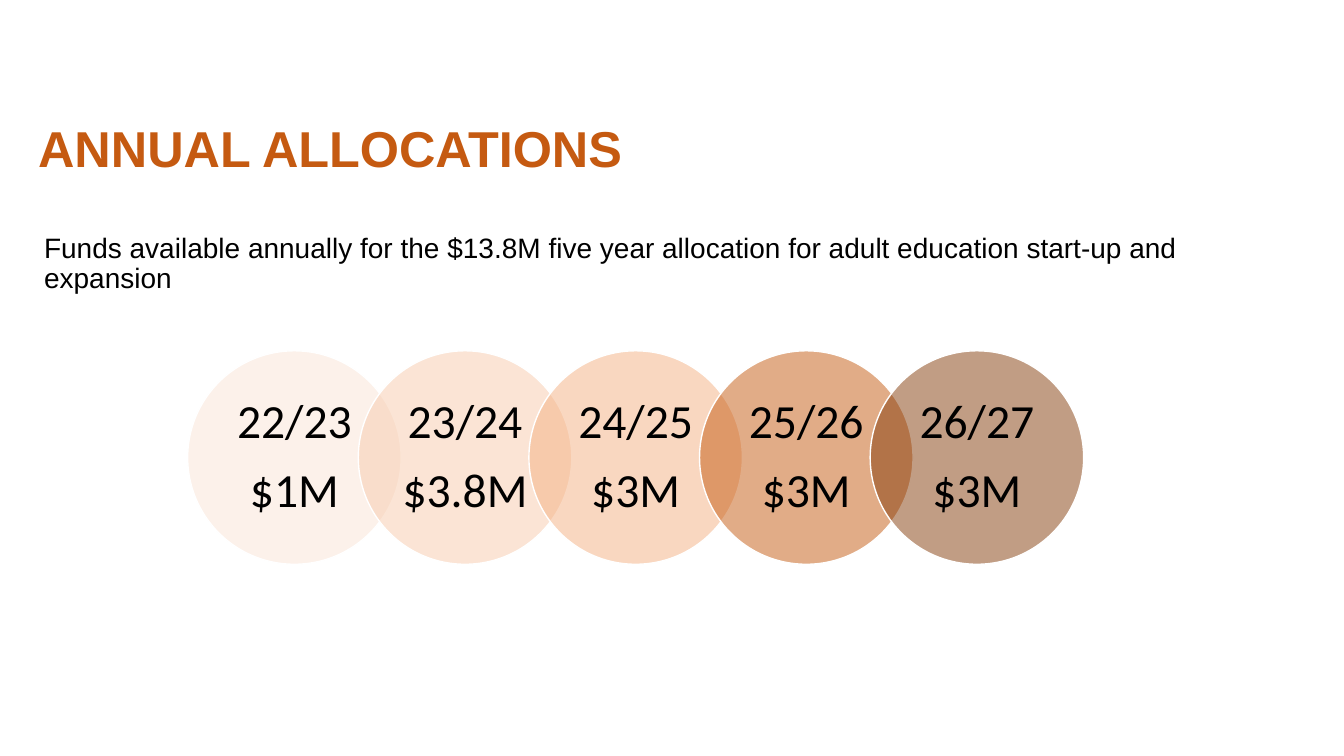
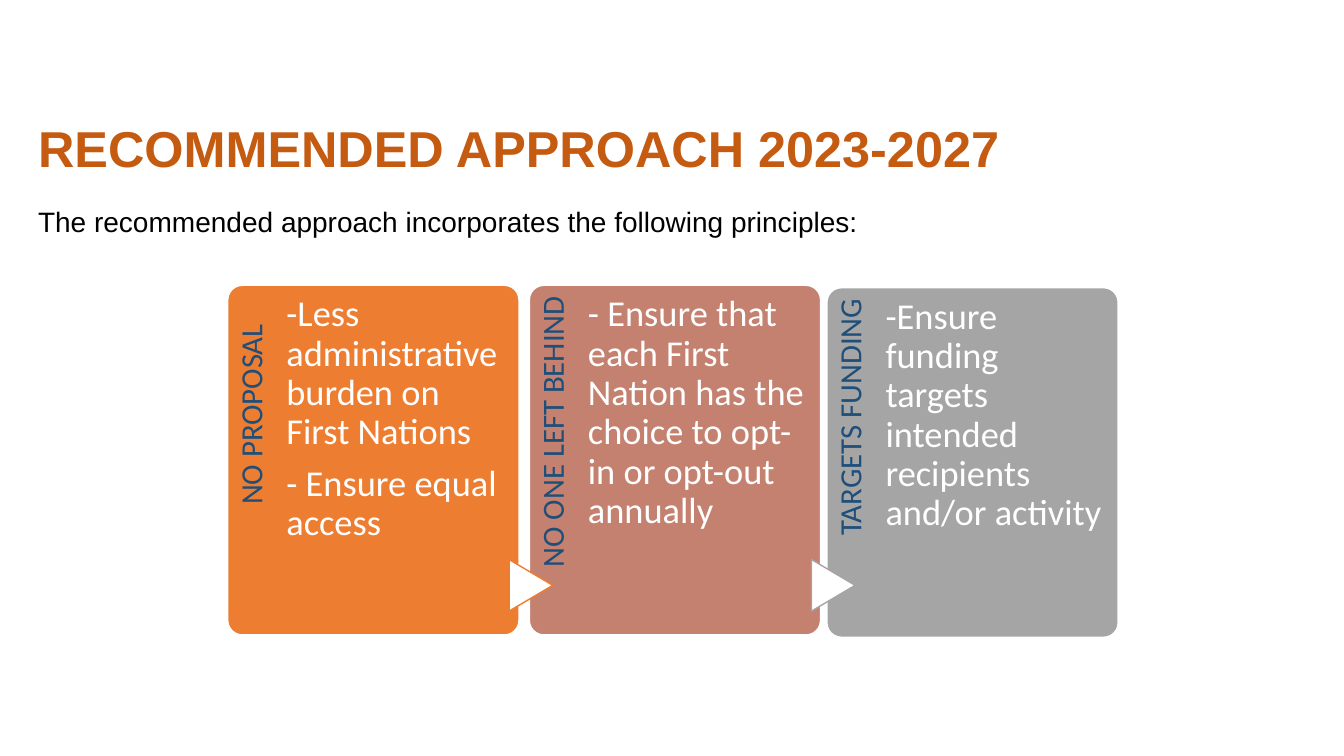
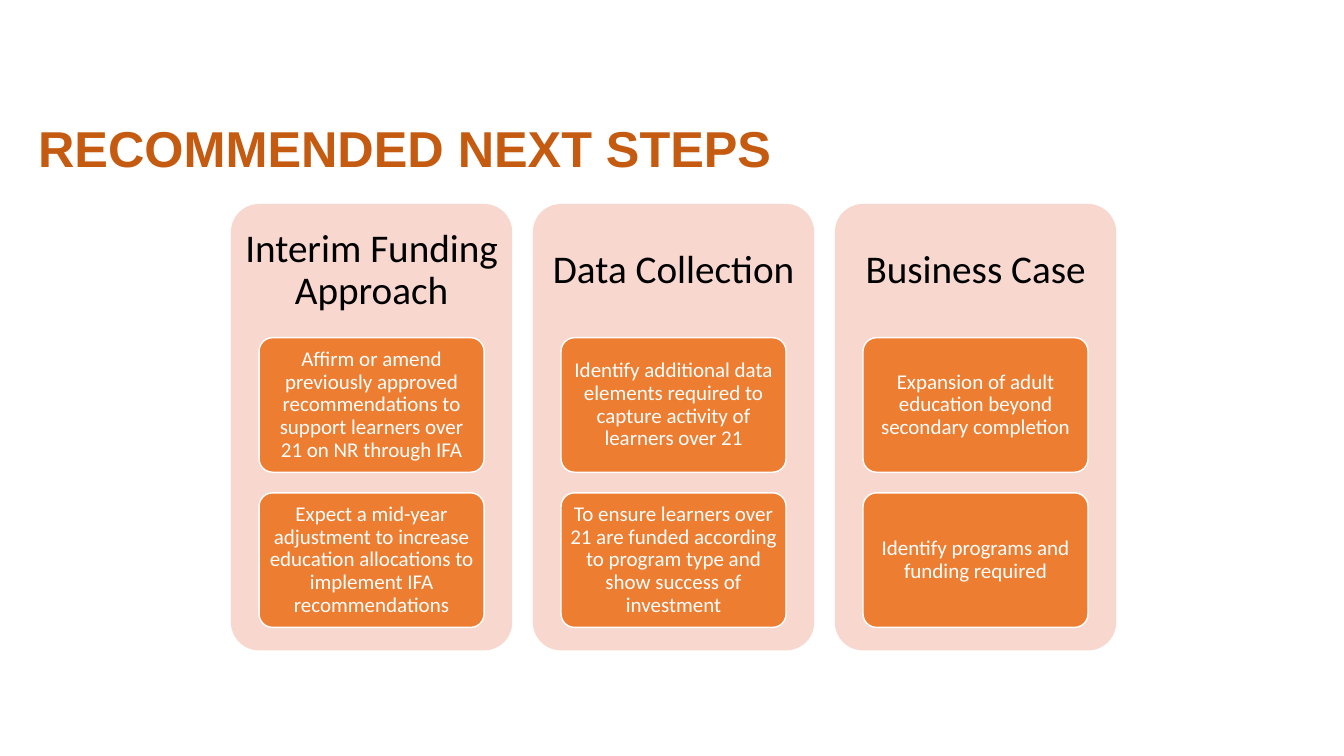
"""Build three slides on adult education funding."""
from dataclasses import dataclass

from lxml import etree
from pptx import Presentation
from pptx import util as u
from pptx.dml.color import RGBColor
from pptx.enum import shapes, text
from pptx.oxml import ns
from pptx.shapes.autoshape import Shape
from pptx.slide import Slide

BLACK, WHITE = "000000", "FFFFFF"
RUST, ORANGE, ROSE, GREY = "C55A11", "ED7D31", "C48170", "A5A5A5"
PALE_ROSE, NAVY = "F8D7CE", "1F4E79"
MARGIN = 0.71
LEFT, CENTER, RIGHT = text.PP_ALIGN.LEFT, text.PP_ALIGN.CENTER, text.PP_ALIGN.RIGHT
TOP, MIDDLE = text.MSO_ANCHOR.TOP, text.MSO_ANCHOR.MIDDLE
ROUNDED = shapes.MSO_SHAPE.ROUNDED_RECTANGLE


@dataclass(frozen=True)
class Box:
    left: float
    top: float
    width: float
    height: float

    def lengths(self) -> list[u.Length]:
        return [u.Cm(value) for value in (self.left, self.top, self.width, self.height)]


@dataclass(frozen=True)
class TextStyle:
    size: float
    color: str
    font: str = "Calibri"
    bold: bool = False
    align: text.PP_ALIGN = LEFT
    anchor: text.MSO_ANCHOR = TOP
    insets: tuple[float, float, float, float] = (0.25, 0.13, 0.25, 0.13)
    space_after: float = 0


@dataclass(frozen=True)
class Allocation:
    year: str
    amount: str
    color: str


@dataclass(frozen=True)
class Principle:
    label: str
    points: list[str]
    color: str
    left: float
    top: float = 7.19
    label_inset: float = 0.28


@dataclass(frozen=True)
class NextStep:
    heading: str
    actions: list[str]


TITLE = TextStyle(36, RUST, "Arial", bold=True)
INTRO = TextStyle(20, BLACK, "Arial")
CIRCLE = TextStyle(34, BLACK, align=CENTER, anchor=MIDDLE,
                   insets=(0.3, 0.12, 0.3, 0.12), space_after=12)
POINT = TextStyle(26, WHITE, insets=(1.37, 0.15, 0.28, 0), space_after=9)
HEADING = TextStyle(28, BLACK, align=CENTER, anchor=MIDDLE, insets=(0.3, 0.3, 0.3, 0.3))
ACTION = TextStyle(15, WHITE, align=CENTER, anchor=MIDDLE, insets=(0.1, 0.08, 0.1, 0.08))

ALLOCATIONS = [
    Allocation("22/23", "$1M", "FBE5D6"),
    Allocation("23/24", "$3.8M", "F8CBAD"),
    Allocation("24/25", "$3M", "F4B183"),
    Allocation("25/26", "$3M", RUST),
    Allocation("26/27", "$3M", "843C0B"),
]
PRINCIPLES = [
    Principle("NO PROPOSAL",
              ["-Less administrative burden on First Nations", "- Ensure equal access"],
              ORANGE, 5.74, label_inset=0.98),
    Principle("NO ONE LEFT BEHIND",
              ["- Ensure that each First Nation has the choice to opt-in or opt-out annually"],
              ROSE, 13.34),
    Principle("TARGETS FUNDING",
              ["-Ensure funding targets intended recipients and/or activity"],
              GREY, 20.84, top=7.25),
]
NEXT_STEPS = [
    NextStep("Interim Funding Approach", [
        "Affirm or amend previously approved recommendations to support learners over 21 "
        "on NR through IFA",
        "Expect a mid-year adjustment to increase education allocations to implement IFA "
        "recommendations",
    ]),
    NextStep("Data Collection", [
        "Identify additional data elements required to capture activity of learners over 21",
        "To ensure learners over 21 are funded according to program type and show success "
        "of investment",
    ]),
    NextStep("Business Case", [
        "Expansion of adult education beyond secondary completion",
        "Identify programs and funding required",
    ]),
]


def rgb(color: str) -> RGBColor:
    """Turn a hex string into a colour."""
    return RGBColor.from_string(color)


def write(shape: Shape, lines: list[str], style: TextStyle) -> None:
    """Fill a shape with styled paragraphs."""
    frame = shape.text_frame
    frame.word_wrap = True
    frame.auto_size = text.MSO_AUTO_SIZE.NONE
    frame.vertical_anchor = style.anchor
    (frame.margin_left, frame.margin_top,
     frame.margin_right, frame.margin_bottom) = (u.Cm(inset) for inset in style.insets)
    frame.text = "\n".join(lines)
    for paragraph in frame.paragraphs:
        paragraph.alignment = style.align
        paragraph.line_spacing = 0.9
        paragraph.space_before = u.Pt(0)
        paragraph.space_after = u.Pt(style.space_after)
        paragraph.font.name = style.font
        paragraph.font.size = u.Pt(style.size)
        paragraph.font.bold = style.bold
        paragraph.font.color.rgb = rgb(style.color)


def add_text(slide: Slide, box: Box, line: str, style: TextStyle) -> Shape:
    """Add a text box with one paragraph."""
    shape = slide.shapes.add_textbox(*box.lengths())
    write(shape, [line], style)
    return shape


def add_panel(slide: Slide, kind: shapes.MSO_SHAPE, box: Box, fill: str,
              line: str | None = WHITE, corner: float | None = None) -> Shape:
    """Add a filled shape without a shadow."""
    shape = slide.shapes.add_shape(kind, *box.lengths())
    shape.shadow.inherit = False
    shape.fill.solid()
    shape.fill.fore_color.rgb = rgb(fill)
    if line is None:
        shape.line.fill.background()
    else:
        shape.line.color.rgb = rgb(line)
        shape.line.width = u.Pt(1)
    if corner is not None:
        shape.adjustments[0] = corner
    return shape


def set_opacity(shape: Shape, percent: int) -> None:
    """Make the solid fill of a shape partly transparent."""
    color = shape.fill._xPr.find(ns.qn("a:solidFill"))[0]
    etree.SubElement(color, ns.qn("a:alpha")).set("val", str(percent * 1000))


def add_titled_slide(presentation: Presentation, title: str) -> Slide:
    """Add a title-only slide with the shared title style."""
    slide = presentation.slides.add_slide(presentation.slide_layouts[5])
    shape = slide.shapes.title
    shape.left, shape.top, shape.width, shape.height = Box(MARGIN, 3, 29, 2.16).lengths()
    write(shape, [title], TITLE)
    return slide


def add_allocations(presentation: Presentation) -> None:
    """Add the row of overlapping yearly circles."""
    slide = add_titled_slide(presentation, "ANNUAL ALLOCATIONS")
    add_text(slide, Box(0.86, 5.77, 30.3, 2),
             "Funds available annually for the $13.8M five year allocation for adult "
             "education start-up and expansion", INTRO)
    diameter, pitch = 5.38, 4.3
    for index, allocation in enumerate(ALLOCATIONS):
        box = Box(4.73 + index * pitch, 8.84, diameter, diameter)
        circle = add_panel(slide, shapes.MSO_SHAPE.OVAL, box, allocation.color)
        set_opacity(circle, 50)
        write(circle, [allocation.year, allocation.amount], CIRCLE)


def add_principles(presentation: Presentation) -> None:
    """Add the three principle cards joined by arrows."""
    slide = add_titled_slide(presentation, "RECOMMENDED APPROACH 2023-2027")
    add_text(slide, Box(MARGIN, 5.13, 30.3, 1.2),
             "The recommended approach incorporates the following principles:", INTRO)
    label_length, label_depth = 7.24, 1.47
    shift = (label_length - label_depth) / 2
    for principle in PRINCIPLES:
        card = add_panel(slide, ROUNDED, Box(principle.left, principle.top, 7.34, 8.81),
                         principle.color, corner=0.05)
        write(card, principle.points, POINT)
        label_box = Box(principle.left - shift, principle.top + shift,
                        label_length, label_depth)
        style = TextStyle(22, NAVY, align=RIGHT, insets=(0, 0.2, principle.label_inset, 0))
        add_text(slide, label_box, principle.label, style).rotation = 270
    for index, outline in enumerate((ORANGE, GREY)):
        arrow = add_panel(slide, shapes.MSO_SHAPE.FLOWCHART_EXTRACT,
                          Box(12.73 + index * 7.62, 14.2, 1.3, 1.1), WHITE, outline)
        arrow.rotation = 90


def add_next_steps(presentation: Presentation) -> None:
    """Add the three columns of recommended actions."""
    slide = add_titled_slide(presentation, "RECOMMENDED NEXT STEPS")
    top, width, pitch, indent = 5.14, 7.09, 7.61, 0.71
    for column, step in enumerate(NEXT_STEPS):
        left = 5.82 + column * pitch
        add_panel(slide, ROUNDED, Box(left, top, width, 11.25), PALE_ROSE, None, 0.1)
        add_text(slide, Box(left, top, width, 3.38), step.heading, HEADING)
        for row, action in enumerate(step.actions):
            box = Box(left + indent, 8.51 + row * 3.91, width - 2 * indent, 3.39)
            write(add_panel(slide, ROUNDED, box, ORANGE, corner=0.1), [action], ACTION)


def main() -> None:
    """Build and save the presentation."""
    presentation = Presentation()
    presentation.slide_width, presentation.slide_height = u.Cm(33.87), u.Cm(19.05)
    add_allocations(presentation)
    add_principles(presentation)
    add_next_steps(presentation)
    presentation.save("out.pptx")


if __name__ == "__main__":
    main()
